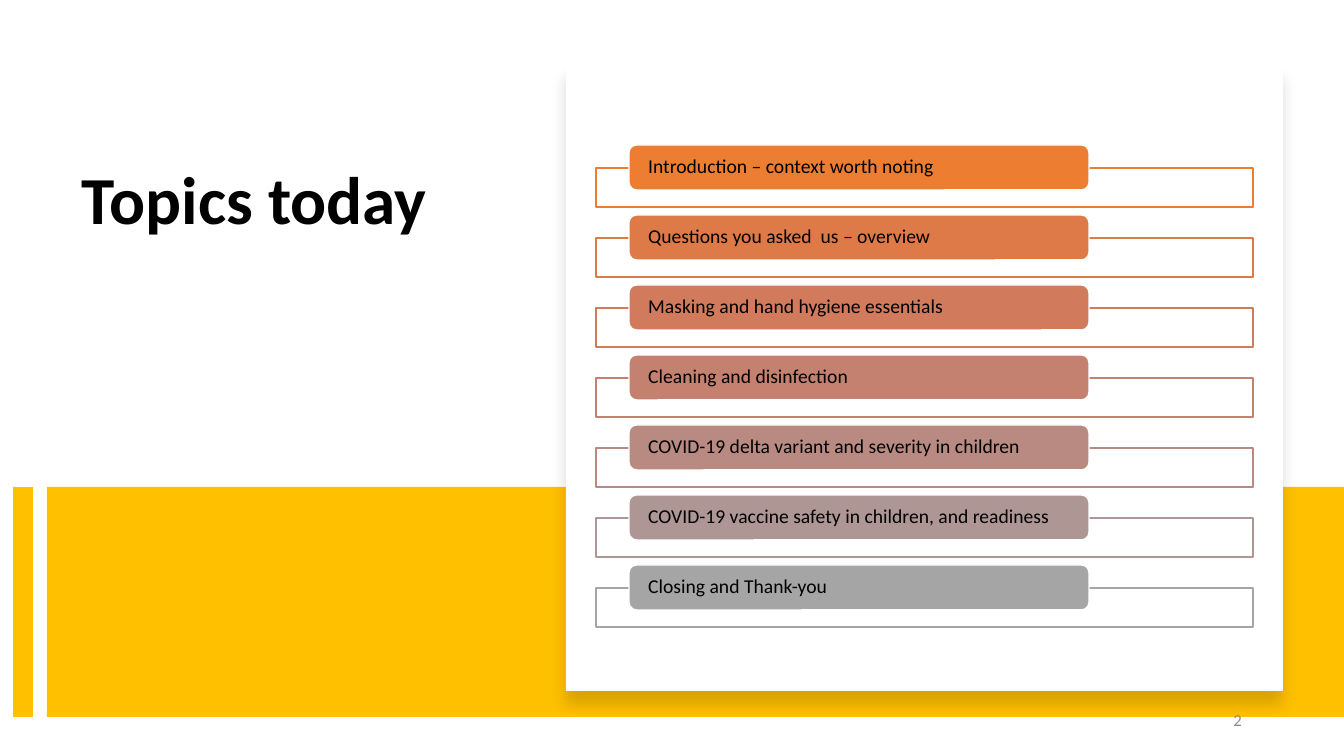
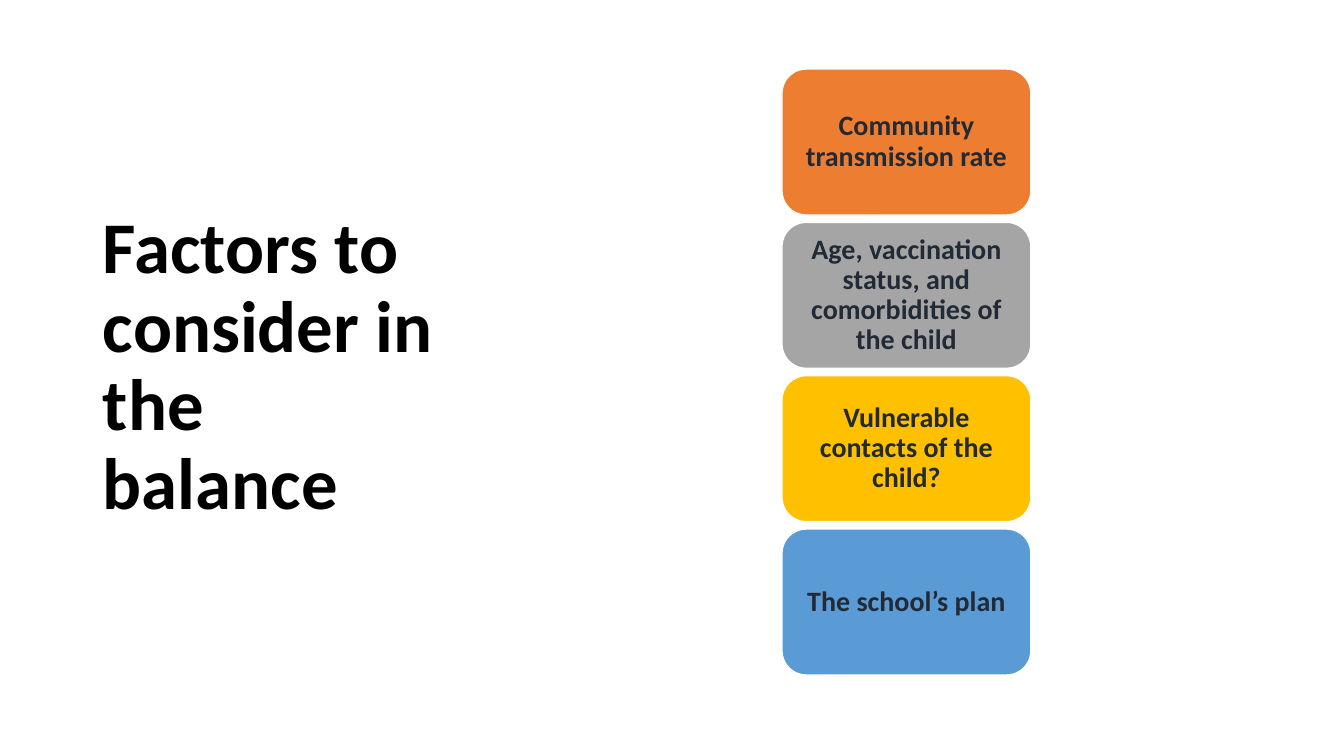
from lxml.etree import SubElement
from pptx import Presentation
from pptx.dml.color import RGBColor
from pptx.enum.shapes import MSO_CONNECTOR, MSO_SHAPE
from pptx.enum.text import MSO_ANCHOR, MSO_AUTO_SIZE, PP_ALIGN
from pptx.oxml.ns import qn
from pptx.util import Emu, Pt

PX = 914400 / 100.8
FONT = "Calibri"
BLACK = RGBColor(0x00, 0x00, 0x00)
WHITE = RGBColor(0xFF, 0xFF, 0xFF)
NAVY = RGBColor(0x22, 0x2A, 0x35)
MUTED = RGBColor(0x8C, 0x8C, 0x8C)
ORANGE = RGBColor(0xED, 0x7D, 0x31)
GRAY = RGBColor(0xA5, 0xA5, 0xA5)
GOLD = RGBColor(0xFF, 0xC0, 0x00)
BLUE = RGBColor(0x5B, 0x9B, 0xD5)
ORANGE_TO_GRAY = [
    ORANGE,
    RGBColor(0xDE, 0x7A, 0x47),
    RGBColor(0xD1, 0x7B, 0x5C),
    RGBColor(0xC4, 0x81, 0x70),
    RGBColor(0xB9, 0x8A, 0x82),
    RGBColor(0xAE, 0x96, 0x94),
    GRAY,
]


def add_box(slide, preset, place, fill, line=None):
    """Add a flat shape; place is left, top, width, height in px."""
    box = slide.shapes.add_shape(preset, *[Emu(round(n * PX)) for n in place])
    box.shadow.inherit = False
    box.fill.solid()
    box.fill.fore_color.rgb = fill
    if line is None:
        box.line.fill.background()
    else:
        box.line.color.rgb = line
        box.line.width = Pt(1)
    return box


def write(shape, text, size, color, align, anchor, bold=False, margins=(10, 5)):
    """Write one styled paragraph; margins are side and top/bottom in px."""
    frame = shape.text_frame
    frame.text = text
    frame.word_wrap = True
    frame.auto_size = MSO_AUTO_SIZE.NONE
    frame.vertical_anchor = anchor
    frame.margin_left = frame.margin_right = Emu(round(margins[0] * PX))
    frame.margin_top = frame.margin_bottom = Emu(round(margins[1] * PX))
    paragraph = frame.paragraphs[0]
    paragraph.alignment = align
    paragraph.line_spacing = 0.9
    paragraph.font.name = FONT
    paragraph.font.size = Pt(size)
    paragraph.font.bold = bold
    paragraph.font.color.rgb = color


prs = Presentation()
prs.slide_width = Emu(round(1344 * PX))
prs.slide_height = Emu(round(756 * PX))

# Both slides: a large bold title on the left
titles = [
    ("Topics today", 48, MSO_ANCHOR.TOP, (72, 161, 418, 296)),
    ("Factors to consider in the balance", 52, MSO_ANCHOR.MIDDLE, (93, 61, 372, 614)),
]
slides = []
for text, size, anchor, place in titles:
    slide = prs.slides.add_slide(prs.slide_layouts[5])
    title = slide.shapes.title
    title.left, title.top, title.width, title.height = [Emu(round(n * PX)) for n in place]
    write(title, text, size, BLACK, PP_ALIGN.LEFT, anchor, bold=True)
    slides.append(slide)
agenda, factors = slides

# Agenda: gold band with a bar to its left
BAND_TOP, BAND_HEIGHT, BAR_X = 487, 230, 23
add_box(agenda, MSO_SHAPE.RECTANGLE, (47, BAND_TOP, 1297, BAND_HEIGHT), GOLD)
bar_x = Emu(round(BAR_X * PX))
bar = agenda.shapes.add_connector(
    MSO_CONNECTOR.STRAIGHT,
    bar_x, Emu(round(BAND_TOP * PX)),
    bar_x, Emu(round((BAND_TOP + BAND_HEIGHT) * PX)),
)
bar.line.color.rgb = GOLD
bar.line.width = Pt(14)
SubElement(bar._element.spPr, qn("a:effectLst"))

# Agenda: white card with a soft shadow below it
card = add_box(agenda, MSO_SHAPE.RECTANGLE, (566, 65, 717, 626), WHITE)
effects = card._element.spPr.find(qn("a:effectLst"))
shadow = SubElement(effects, qn("a:outerShdw"), blurRad=str(Pt(11)), dist=str(Pt(10)),
                    dir="5400000", algn="t", rotWithShape="0")
shadow_color = SubElement(shadow, qn("a:srgbClr"), val=str(BLACK))
SubElement(shadow_color, qn("a:alpha"), val="15000")

# Agenda: one outlined frame and one label per topic
topics = [
    "Introduction – context worth noting",
    "Questions you asked  us – overview",
    "Masking and hand hygiene essentials",
    "Cleaning and disinfection",
    "COVID-19 delta variant and severity in children",
    "COVID-19 vaccine safety in children, and readiness",
    "Closing and Thank-you",
]
TOPIC_TOP, TOPIC_PITCH = 145, 70
for row, (topic, color) in enumerate(zip(topics, ORANGE_TO_GRAY)):
    top = TOPIC_TOP + row * TOPIC_PITCH
    add_box(agenda, MSO_SHAPE.RECTANGLE, (596, top + 23, 657, 39), WHITE, color)
    label = add_box(agenda, MSO_SHAPE.ROUNDED_RECTANGLE, (629, top, 460, 45), color, WHITE)
    write(label, topic, 14, BLACK, PP_ALIGN.LEFT, MSO_ANCHOR.MIDDLE, margins=(17, 0))

# Agenda: page number
page_number = agenda.shapes.add_textbox(*[Emu(round(n * PX)) for n in (950, 701, 302, 40)])
write(page_number, "2", 12, MUTED, PP_ALIGN.RIGHT, MSO_ANCHOR.MIDDLE)

# Factors: evenly stacked boxes
considerations = [
    ("Community transmission rate", ORANGE),
    ("Age, vaccination status, and comorbidities of the child", GRAY),
    ("Vulnerable contacts of the child?", GOLD),
    ("The school’s plan", BLUE),
]
STACK_TOP, STACK_BOTTOM, BOX_HEIGHT = 69, 675, 146
pitch = (STACK_BOTTOM - STACK_TOP - BOX_HEIGHT) / (len(considerations) - 1)
for row, (factor, color) in enumerate(considerations):
    place = (782, STACK_TOP + row * pitch, 249, BOX_HEIGHT)
    box = add_box(factors, MSO_SHAPE.ROUNDED_RECTANGLE, place, color, WHITE)
    write(box, factor, 20, NAVY, PP_ALIGN.CENTER, MSO_ANCHOR.MIDDLE, bold=True, margins=(8, 4))

prs.save("out.pptx")
